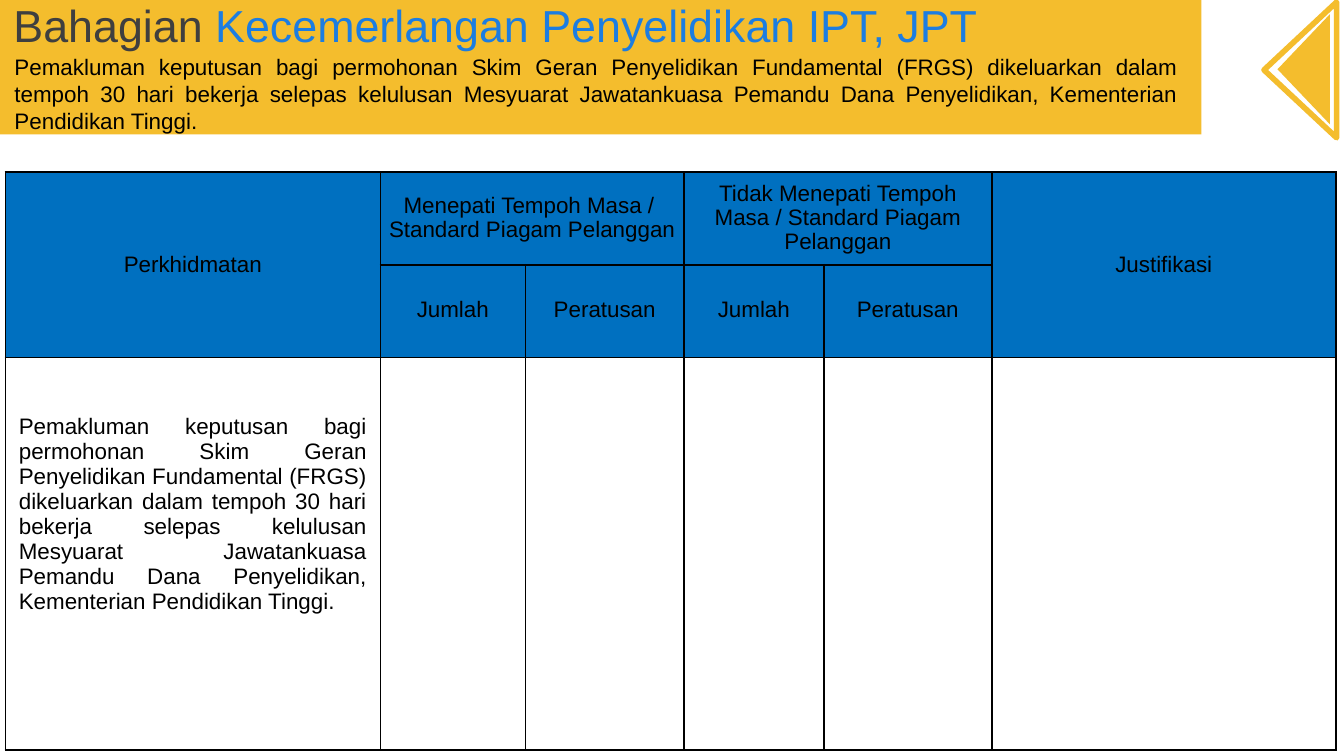
from lxml import etree
from pptx import Presentation, util as u
from pptx.dml.color import RGBColor
from pptx.enum import shapes, text
from pptx.oxml.ns import qn

GOLD = RGBColor(0xF4, 0xBD, 0x2D)
HEADER_BLUE = RGBColor(0x00, 0x70, 0xC0)
TITLE_BLUE = RGBColor(0x1C, 0x7D, 0xE1)
GREY = RGBColor(0x3F, 0x3F, 0x3F)
BLACK = RGBColor(0, 0, 0)

CENTER, JUSTIFY, LEFT = text.PP_ALIGN.CENTER, text.PP_ALIGN.JUSTIFY, text.PP_ALIGN.LEFT
PADDING = (0.1, 0.05, 0.1, 0.05)
NO_PADDING = (0, 0, 0, 0)

CHARTER = (
    "Pemakluman keputusan bagi permohonan Skim Geran Penyelidikan Fundamental (FRGS) "
    "dikeluarkan dalam tempoh 30 hari bekerja selepas kelulusan Mesyuarat Jawatankuasa "
    "Pemandu Dana Penyelidikan, Kementerian Pendidikan Tinggi."
)
COLUMNS = [2.79, 1.08, 1.18, 1.04, 1.25, 2.56]
ROWS = [0.69, 0.69, 2.92]


def write(frame, *paragraphs, size=12, align=LEFT, spacing=None):
    for index, spans in enumerate(paragraphs):
        para = frame.paragraphs[0] if index == 0 else frame.add_paragraph()
        para.alignment = align
        if spacing:
            para.line_spacing = spacing
        for words, color in spans:
            span = para.add_run()
            span.text = words
            span.font.name = "Arial"
            span.font.size = u.Pt(size)
            span.font.bold = False
            span.font.color.rgb = color


def set_margins(holder, margins):
    left, top, right, bottom = (u.Inches(value) for value in margins)
    holder.margin_left, holder.margin_top = left, top
    holder.margin_right, holder.margin_bottom = right, bottom


def add_shape(slide, kind, left, top, width, height, fill=None, line=None):
    shape = slide.shapes.add_shape(
        kind, u.Inches(left), u.Inches(top), u.Inches(width), u.Inches(height))
    shape.shadow.inherit = False
    if fill:
        shape.fill.solid()
        shape.fill.fore_color.rgb = fill
    else:
        shape.fill.background()
    if line:
        shape.line.color.rgb = line
        shape.line.width = u.Pt(3)
    else:
        shape.line.fill.background()
    return shape


def add_banner(slide, left, top, width, height):
    add_shape(slide, shapes.MSO_SHAPE.RECTANGLE, left, top, width, height, fill=GOLD)

    box = slide.shapes.add_textbox(
        u.Inches(left + 0.01), u.Inches(top + 0.35), u.Inches(width - 0.08), u.Inches(0.7))
    box.text_frame.word_wrap = True
    set_margins(box.text_frame, PADDING)
    write(box.text_frame, [(CHARTER, BLACK)], align=JUSTIFY)

    title = slide.shapes.title
    title.element.getparent().append(title.element)
    title.left, title.top = u.Inches(left), u.Inches(top - 0.11)
    title.width, title.height = u.Inches(7.68), u.Inches(0.59)
    frame = title.text_frame
    frame.auto_size = text.MSO_AUTO_SIZE.NONE
    frame.vertical_anchor = text.MSO_ANCHOR.MIDDLE
    set_margins(frame, PADDING)
    write(frame, [("Bahagian ", GREY), ("Kecemerlangan Penyelidikan IPT, JPT", TITLE_BLUE)],
          size=24)


def add_arrow(slide, left, top, width, height):
    triangle = shapes.MSO_SHAPE.ISOSCELES_TRIANGLE
    inner = add_shape(slide, triangle, left + 0.12, top + 0.07, 0.82, 0.39, fill=GOLD)
    outer = add_shape(slide, triangle, left, top, width, height, line=GOLD)
    inner.rotation = outer.rotation = 270


def add_borders(cell):
    properties = cell._tc.get_or_add_tcPr()
    for index, side in enumerate(("lnL", "lnR", "lnT", "lnB")):
        border = etree.Element(qn(f"a:{side}"), w=str(u.Pt(1)))
        fill = etree.SubElement(border, qn("a:solidFill"))
        etree.SubElement(fill, qn("a:srgbClr"), val=str(BLACK))
        properties.insert(index, border)


def add_charter_table(slide, left, top, width, height):
    table = slide.shapes.add_table(
        len(ROWS), len(COLUMNS), u.Inches(left), u.Inches(top),
        u.Inches(width), u.Inches(height)).table
    table.first_row = table.horz_banding = False
    for column, size in zip(table.columns, COLUMNS):
        column.width = u.Inches(size)
    for row, size in zip(table.rows, ROWS):
        row.height = u.Inches(size)

    for row in range(len(ROWS)):
        for column in range(len(COLUMNS)):
            cell = table.cell(row, column)
            if row < 2:
                cell.fill.solid()
                cell.fill.fore_color.rgb = HEADER_BLUE
            else:
                cell.fill.background()
            add_borders(cell)

    for start, end in (((0, 0), (1, 0)), ((0, 1), (0, 2)), ((0, 3), (0, 4)), ((0, 5), (1, 5))):
        table.cell(*start).merge(table.cell(*end))

    headers = [
        (0, 0, ["Perkhidmatan"], None),
        (0, 1, ["Menepati Tempoh Masa / ", "Standard Piagam Pelanggan"], 0.96),
        (0, 3, ["Tidak Menepati Tempoh Masa / Standard Piagam Pelanggan"], 0.96),
        (0, 5, ["Justifikasi"], None),
    ]
    headers += [(1, column, ["Jumlah" if column % 2 else "Peratusan"], 0.88)
                for column in range(1, 5)]
    for row, column, lines, spacing in headers:
        cell = table.cell(row, column)
        cell.vertical_anchor = text.MSO_ANCHOR.MIDDLE
        set_margins(cell, NO_PADDING if column else PADDING)
        write(cell.text_frame, *([(line, BLACK)] for line in lines),
              align=CENTER, spacing=spacing)

    service = table.cell(2, 0)
    set_margins(service, (0.1, 0.42, 0.1, 0.05))
    write(service.text_frame, [(CHARTER, BLACK)], align=JUSTIFY)


def main():
    deck = Presentation()
    deck.slide_width = u.Inches(10)
    deck.slide_height = deck.slide_width * 9 // 16
    slide = deck.slides.add_slide(deck.slide_layouts[5])
    add_banner(slide, 0, 0, 8.94, 1)
    add_arrow(slide, 9.17, 0.25, 1.01, 0.54)
    add_charter_table(slide, 0.04, 1.28, sum(COLUMNS), sum(ROWS))
    deck.save("out.pptx")


if __name__ == "__main__":
    main()
